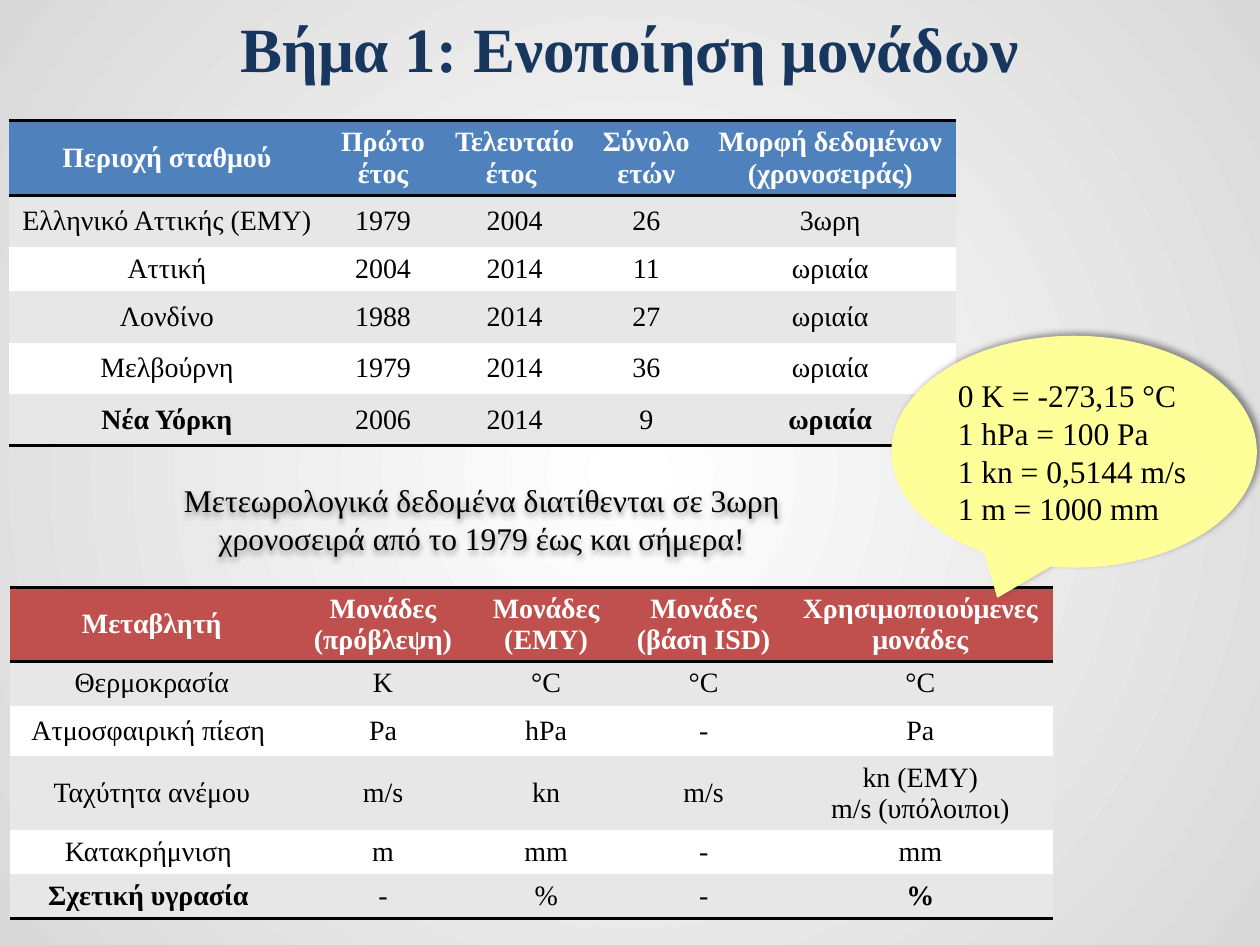
"""Build the slide on unifying the units of weather data."""
from dataclasses import dataclass

from lxml.etree import SubElement
from pptx import Presentation
from pptx.dml.color import RGBColor as Rgb
from pptx.enum.shapes import MSO_SHAPE as Shape
from pptx.enum.text import MSO_ANCHOR as Anchor, PP_ALIGN as Align
from pptx.oxml import parse_xml
from pptx.oxml.ns import nsdecls, qn
from pptx.util import Inches, Pt


@dataclass(frozen=True)
class Theme:
    font: str = "Times New Roman"
    title_size: int = 36
    note_size: int = 18
    cell_size: int = 16
    rule_width: float = 2
    title: str = "17375E"
    text: str = "000000"
    light: str = "FFFFFF"
    edge: str = "D9D9D9"
    band: str = "E7E7E7"
    blue: str = "4F81BD"
    red: str = "C0504D"
    callout: str = "FFFF99"
    plain_table: str = "{2D5ABB26-0587-4C30-8999-92F81FD0307C}"


@dataclass(frozen=True)
class Grid:
    left: float
    top: float
    header_color: str
    widths: tuple[float, ...]
    heights: tuple[float, ...]
    rows: tuple[tuple[str, ...], ...]


@dataclass(frozen=True)
class Shadow:
    blur: float
    distance: float
    angle: int
    opacity: int


THEME = Theme()

STATIONS = Grid(
    0.07, 0.96, THEME.blue,
    (2.51, 0.92, 1.17, 0.92, 2),
    (0.59, 0.41, 0.35, 0.41, 0.41, 0.41),
    (
        ("Περιοχή σταθμού", "Πρώτο έτος", "Τελευταίο έτος ", "Σύνολο ετών",
         "Μορφή δεδομένων (χρονοσειράς)"),
        ("Ελληνικό Αττικής (ΕΜΥ)", "1979", "2004", "26", "3ωρη"),
        ("Αττική", "2004", "2014", "11", "ωριαία"),
        ("Λονδίνο", "1988", "2014", "27", "ωριαία"),
        ("Μελβούρνη", "1979", "2014", "36", "ωριαία"),
        ("Νέα Υόρκη", "2006", "2014", "9", "ωριαία"),
    ),
)
UNITS = Grid(
    0.08, 4.66, THEME.red,
    (2.25, 1.42, 1.17, 1.33, 2.11),
    (0.59, 0.35, 0.4, 0.59, 0.35, 0.35),
    (
        ("Μεταβλητή", "Μονάδες (πρόβλεψη)", "Μονάδες (EMY)",
         "Μονάδες (βάση ΙSD)", "Χρησιμοποιούμενες μονάδες"),
        ("Θερμοκρασία", "Κ", "°C", "°C", "°C"),
        ("Ατμοσφαιρική πίεση ", "Pa", "hPa", "-", "Pa"),
        ("Ταχύτητα ανέμου", "m/s", "kn", "m/s", "kn (EMY)\nm/s (υπόλοιποι)"),
        ("Κατακρήμνιση ", "m", "mm", "-", "mm"),
        ("Σχετική υγρασία ", "-", "%", "-", "%"),
    ),
)
CONVERSIONS = "0 Κ = -273,15 °C\n1 hPa = 100 Pa\n1 kn = 0,5144 m/s\n1 m = 1000 mm"
NOTE = "Μετεωρολογικά δεδομένα διατίθενται σε 3ωρη χρονοσειρά από το 1979 έως και σήμερα!"


def write(frame, text: str, size: int, color: str = THEME.text,
          bold: bool = False, align: Align = Align.CENTER) -> None:
    """Fill a text frame with evenly styled paragraphs."""
    frame.text = text
    frame.word_wrap = True
    for para in frame.paragraphs:
        para.alignment = align
        font = para.font
        font.name, font.size, font.bold = THEME.font, Pt(size), bold
        font.color.rgb = Rgb.from_string(color)


def add_rule(cell, side: str, position: int) -> None:
    """Draw a solid border on one side of a cell."""
    rule = parse_xml(
        f'<a:{side} {nsdecls("a")} w="{Pt(THEME.rule_width)}"><a:solidFill>'
        f'<a:srgbClr val="{THEME.text}"/></a:solidFill></a:{side}>')
    cell._tc.get_or_add_tcPr().insert(position, rule)


def add_grid(slide, grid: Grid) -> None:
    """Draw a banded table with rules around its header and below its last row."""
    last_row, last_column = len(grid.rows) - 1, len(grid.widths) - 1
    table = slide.shapes.add_table(
        len(grid.rows), len(grid.widths), Inches(grid.left), Inches(grid.top),
        Inches(sum(grid.widths)), Inches(sum(grid.heights))).table
    table.first_row = table.horz_banding = False
    table._tbl.tblPr.find(qn("a:tableStyleId")).text = THEME.plain_table
    for column, width in zip(table.columns, grid.widths):
        column.width = Inches(width)
    for i, (row, height) in enumerate(zip(grid.rows, grid.heights)):
        table.rows[i].height = Inches(height)
        header = i == 0
        fill = grid.header_color if header else THEME.band if i % 2 else THEME.light
        for j, text in enumerate(row):
            cell = table.cell(i, j)
            cell.vertical_anchor = Anchor.MIDDLE
            cell.margin_top = cell.margin_bottom = Inches(0.04)
            cell.fill.solid()
            cell.fill.fore_color.rgb = Rgb.from_string(fill)
            bold = header or (i == last_row and j in (0, last_column))
            write(cell.text_frame, text, THEME.cell_size,
                  THEME.light if header else THEME.text, bold)
            if header:
                add_rule(cell, "lnT", 0)
            if header or i == last_row:
                add_rule(cell, "lnB", int(header))


def add_shadow(shape, shadow: Shadow) -> None:
    """Give a shape a soft black outer shadow."""
    shape.shadow.inherit = False
    effects = shape._element.spPr.find(qn("a:effectLst"))
    outer = SubElement(effects, qn("a:outerShdw"), blurRad=str(Pt(shadow.blur)),
                       dist=str(Pt(shadow.distance)), dir=str(shadow.angle * 60000),
                       algn="ctr", rotWithShape="0")
    color = SubElement(outer, qn("a:srgbClr"), val=THEME.text)
    SubElement(color, qn("a:alpha"), val=str(shadow.opacity * 1000))


def add_callout(slide) -> None:
    """Draw the speech bubble with the unit conversions."""
    bubble = slide.shapes.add_shape(
        Shape.OVAL_CALLOUT, Inches(7.08), Inches(2.67), Inches(2.89), Inches(1.83))
    bubble.adjustments[0], bubble.adjustments[1] = -0.21, 0.63
    bubble.fill.solid()
    bubble.fill.fore_color.rgb = Rgb.from_string(THEME.callout)
    bubble.line.color.rgb = Rgb.from_string(THEME.callout)
    bubble.line.width = Pt(0.75)
    add_shadow(bubble, Shadow(4, 3, 315, 40))
    bubble.text_frame.vertical_anchor = Anchor.MIDDLE
    write(bubble.text_frame, CONVERSIONS, THEME.note_size, align=Align.LEFT)


def add_note(slide) -> None:
    """Write the shadowed remark between the tables."""
    note = slide.shapes.add_shape(
        Shape.ROUND_2_DIAG_RECTANGLE, Inches(1.2), Inches(3.74), Inches(5.25), Inches(0.76))
    note.fill.background()
    note.line.fill.background()
    add_shadow(note, Shadow(3, 1.5, 90, 40))
    note.text_frame.vertical_anchor = Anchor.MIDDLE
    write(note.text_frame, NOTE, THEME.note_size)


def add_title(slide) -> None:
    """Write the heading across the top of the slide."""
    box = slide.shapes.add_textbox(0, 0, Inches(10), Inches(0.75))
    box.text_frame.vertical_anchor = Anchor.MIDDLE
    write(box.text_frame, "Βήμα 1: Ενοποίηση μονάδων", THEME.title_size, THEME.title, True)


def paint_background(slide) -> None:
    """Shade the background outwards from its centre."""
    fill = slide.background.fill
    fill.gradient()
    for stop, color in zip(fill.gradient_stops, (THEME.light, THEME.edge)):
        stop.color.rgb = Rgb.from_string(color)
    gradient = slide.element.find(".//" + qn("a:gradFill"))
    gradient.remove(gradient.find(qn("a:lin")))
    circle = SubElement(gradient, qn("a:path"), path="circle")
    SubElement(circle, qn("a:fillToRect"), {side: "50000" for side in "ltrb"})


def main() -> None:
    """Build and save the deck."""
    deck = Presentation()
    deck.slide_width, deck.slide_height = Inches(10), Inches(7.5)
    slide = deck.slides.add_slide(deck.slide_layouts[6])
    paint_background(slide)
    for grid in (STATIONS, UNITS):
        add_grid(slide, grid)
    add_callout(slide)
    add_note(slide)
    add_title(slide)
    deck.save("out.pptx")


if __name__ == "__main__":
    main()
